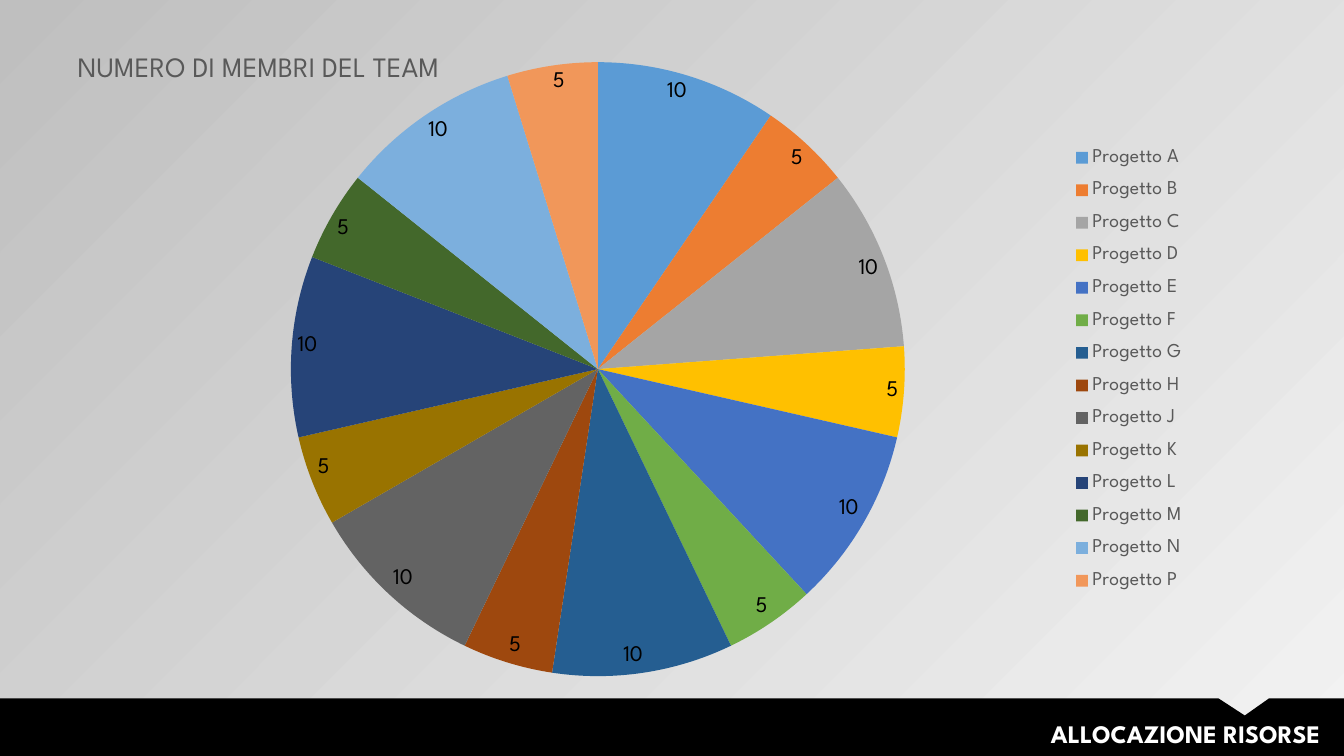
import dataclasses

import lxml.etree
import pptx
import pptx.chart.data
import pptx.dml.color
import pptx.enum.chart
import pptx.enum.text
import pptx.oxml.ns
import pptx.util

Cm = pptx.util.Cm
Pt = pptx.util.Pt
RGB = pptx.dml.color.RGBColor.from_string
qn = pptx.oxml.ns.qn


@dataclasses.dataclass(frozen=True)
class Theme:
    """Colours, font and type sizes of the slide."""
    font: str = "League Spartan"
    back: tuple = ("F2F2F2", "BFBFBF")
    black: str = "000000"
    white: str = "FFFFFF"
    grey: str = "595959"
    slices: tuple = ("5B9BD5", "ED7D31", "A5A5A5", "FFC000", "4472C4", "70AD47", "255E91",
                     "9E480E", "636363", "997300", "264478", "43682B", "7CAFDD", "F1975A")
    base: int = 10
    legend: int = 14
    label: int = 16
    title: int = 18
    heading: int = 20


THEME = Theme()
HEADING = "NUMERO DI MEMBRI DEL TEAM"
PROJECTS = [f"Progetto {c}" for c in "ABCDEFGHJKLMNP"]
MEMBERS = [10, 5] * 7


def set_attrs(obj, values):
    """Set each attribute of an object from a dict."""
    for name, value in values.items():
        setattr(obj, name, value)


def set_font(font, size, color, bold=False):
    """Format a font in the theme typeface."""
    set_attrs(font, {"name": THEME.font, "size": Pt(size), "bold": bold})
    font.color.rgb = RGB(color)


def place_part(chart, tag, index, target=None, **fractions):
    """Give a chart part a manual layout in fractions of the chart."""
    part = chart.element.find(".//" + qn(tag))
    for old in part.findall(qn("c:layout")):
        part.remove(old)
    layout = lxml.etree.Element(qn("c:layout"))
    manual = lxml.etree.SubElement(layout, qn("c:manualLayout"))
    values = {"layoutTarget": target} if target else {}
    values.update(xMode="edge", yMode="edge", **fractions)
    for name, value in values.items():
        lxml.etree.SubElement(manual, qn(f"c:{name}")).set("val", str(value))
    part.insert(index, layout)


def add_background(s):
    """Fill the slide with the diagonal grey gradient."""
    fill = s.background.fill
    fill.gradient()
    fill.gradient_angle = 135
    for stop, color in zip(fill.gradient_stops, THEME.back):
        stop.color.rgb = RGB(color)


def add_footer(s, x, y, w, h):
    """Draw the notched band with the slide title inside it."""
    right, bottom = x + w, y + h
    notch = [(right - Cm(3.16), y), (right - Cm(2.5), y + Cm(0.43)), (right - Cm(1.89), y)]
    fb = s.shapes.build_freeform(x, y)
    fb.add_line_segments(notch + [(right, y), (right, bottom), (x, bottom)], close=True)
    sp = fb.convert_to_shape()
    sp.shadow.inherit = False
    sp.fill.solid()
    sp.fill.fore_color.rgb = RGB(THEME.black)
    sp.line.fill.background()

    title = s.shapes.title
    title.element.addprevious(sp.element)
    set_attrs(title, {"left": right - Cm(23.35), "top": y + Cm(0.38),
                      "width": Cm(23.01), "height": Cm(1.02)})
    tf = title.text_frame
    set_attrs(tf, {"word_wrap": True, "auto_size": pptx.enum.text.MSO_AUTO_SIZE.NONE,
                   "vertical_anchor": pptx.enum.text.MSO_ANCHOR.MIDDLE})
    p = tf.paragraphs[0]
    p.alignment = pptx.enum.text.PP_ALIGN.RIGHT
    r = p.add_run()
    r.text = "ALLOCAZIONE RISORSE"
    set_font(r.font, THEME.title, THEME.white, True)


def add_team_chart(s, x, y, w, h):
    """Add the pie of team members per project."""
    data = pptx.chart.data.CategoryChartData()
    data.categories = PROJECTS
    data.add_series(HEADING, MEMBERS)
    kind = pptx.enum.chart.XL_CHART_TYPE.PIE
    chart = s.shapes.add_chart(kind, x, y, w, h, data).chart
    set_font(chart.font, THEME.base, THEME.black)

    chart.has_title = True
    p = chart.chart_title.text_frame.paragraphs[0]
    r = p.add_run()
    r.text = HEADING
    set_font(r.font, THEME.heading, THEME.grey)

    chart.has_legend = True
    set_attrs(chart.legend, {"position": pptx.enum.chart.XL_LEGEND_POSITION.RIGHT,
                             "include_in_layout": False})
    set_font(chart.legend.font, THEME.legend, THEME.grey)

    plot = chart.plots[0]
    set_attrs(plot, {"vary_by_categories": True, "has_data_labels": True})
    set_attrs(plot.data_labels, {"show_value": True, "show_percentage": False,
                                 "position": pptx.enum.chart.XL_LABEL_POSITION.INSIDE_END})
    set_font(plot.data_labels.font, THEME.label, THEME.black)
    for i, color in enumerate(THEME.slices):
        fill = plot.series[0].points[i].format.fill
        fill.solid()
        fill.fore_color.rgb = RGB(color)

    place_part(chart, "c:title", 1, x=0, y=0.04)
    place_part(chart, "c:legend", 1, x=0.82, y=0.17, w=0.11, h=0.72)
    place_part(chart, "c:plotArea", 0, "inner", x=0.18, y=0.06, w=0.51, h=0.94)


def build_chart_slide(prs):
    """Build the resource allocation slide."""
    s = prs.slides.add_slide(prs.slide_layouts[5])
    add_background(s)
    add_footer(s, 0, Cm(17.6), prs.slide_width, Cm(1.45))
    add_team_chart(s, Cm(1.83), Cm(0.58), Cm(30.43), Cm(16.46))


def main():
    """Create and save the presentation."""
    prs = pptx.Presentation()
    set_attrs(prs, {"slide_width": Cm(33.87), "slide_height": Cm(19.05)})
    build_chart_slide(prs)
    prs.save("out.pptx")


if __name__ == "__main__":
    main()
